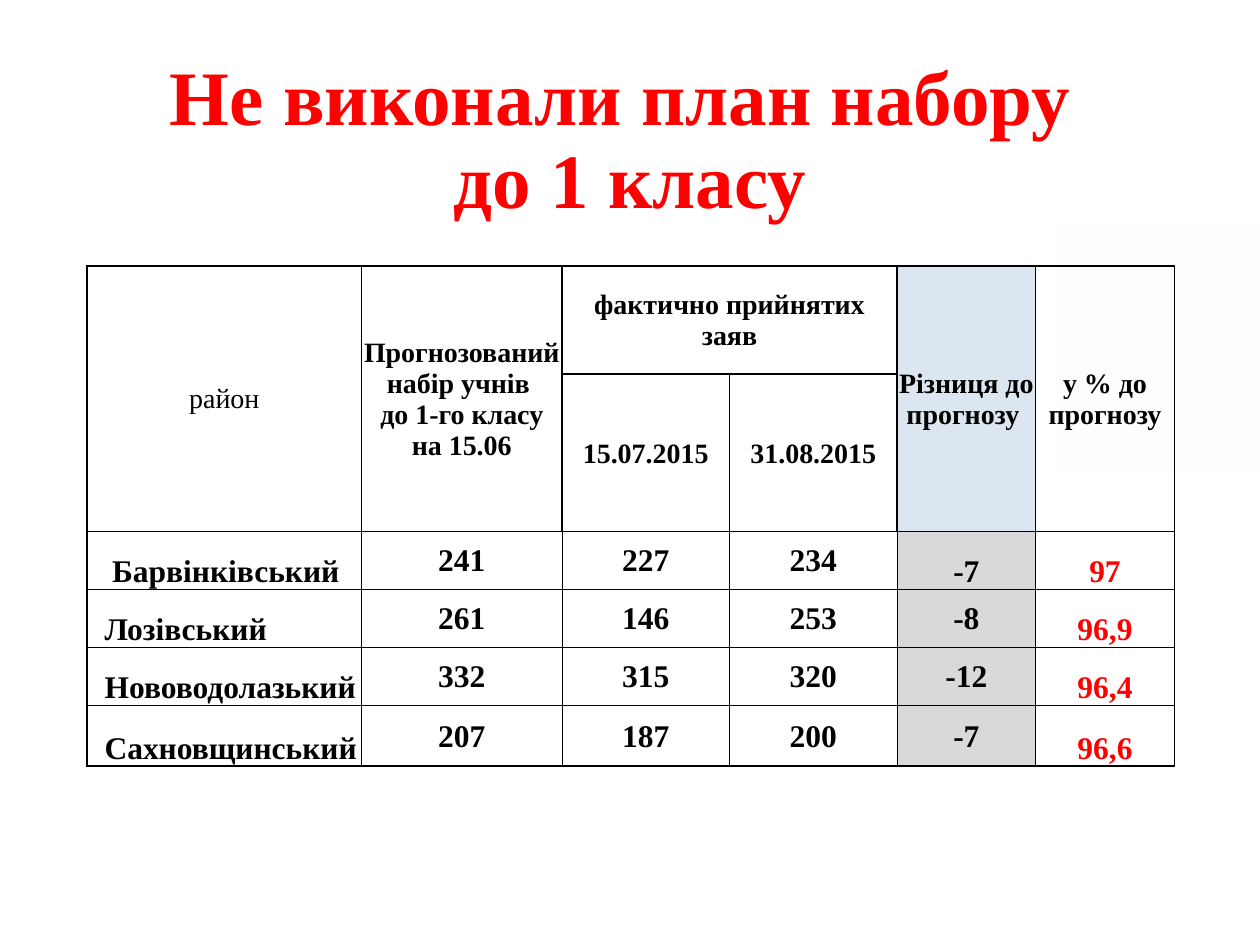
from dataclasses import dataclass

from lxml import etree
from pptx import Presentation
from pptx.dml.color import RGBColor
from pptx.enum.shapes import MSO_SHAPE
from pptx.enum.text import MSO_ANCHOR, PP_ALIGN
from pptx.oxml.ns import qn
from pptx.util import Inches, Pt

RECTANGLE = MSO_SHAPE.RECTANGLE
MIDDLE, BOTTOM = MSO_ANCHOR.MIDDLE, MSO_ANCHOR.BOTTOM
LEFT, CENTER = PP_ALIGN.LEFT, PP_ALIGN.CENTER


@dataclass(frozen=True)
class Theme:
    font: str = "Times New Roman"
    title_size: int = 44
    header_size: int = 16
    body_size: int = 18
    thick: float = 1
    thin: float = 0.5
    black: str = "000000"
    red: str = "FF0000"
    white: str = "FFFFFF"
    pale_blue: str = "DCE6F1"
    gray: str = "D9D9D9"
    tint: str = "F7FAFD"


class SlideBuilder:
    def __init__(self, page, theme):
        self.page = page
        self.theme = theme

    def format_text(self, frame, size, color, bold=True, align=CENTER, spacing=None):
        for para in frame.paragraphs:
            para.alignment = align
            if spacing:
                para.line_spacing = spacing
            for span in para.runs:
                span.font.name = self.theme.font
                span.font.size = Pt(size)
                span.font.bold = bold
                span.font.color.rgb = RGBColor.from_string(color)

    def tint_panel(self, left, top, width, height):
        panel = self.page.shapes.add_shape(
            RECTANGLE, Inches(left), Inches(top), Inches(width), Inches(height))
        panel.shadow.inherit = False
        panel.line.fill.background()
        panel.fill.gradient()
        panel.fill.gradient_angle = 270
        start, end = panel.fill.gradient_stops
        start.color.rgb = RGBColor.from_string(self.theme.tint)
        end.color.rgb = RGBColor.from_string(self.theme.white)
        start.position, end.position = 0, 0.74
        first_color = next(panel.element.iter(qn("a:gs")))[0]
        etree.SubElement(first_color, qn("a:alpha"), val="0")

    def title(self, text, left, top, width, height):
        box = self.page.shapes.add_textbox(
            Inches(left), Inches(top), Inches(width), Inches(height))
        frame = box.text_frame
        frame.word_wrap = True
        frame.vertical_anchor = MIDDLE
        frame.text = text
        self.format_text(frame, self.theme.title_size, self.theme.red, spacing=0.9)

    def table(self, left, top, widths, heights):
        frame = self.page.shapes.add_table(
            len(heights), len(widths), Inches(left), Inches(top),
            Inches(sum(widths)), Inches(sum(heights)))
        table = frame.table
        table.first_row = table.horz_banding = False
        for column, width in zip(table.columns, widths):
            column.width = Inches(width)
        for row, height in zip(table.rows, heights):
            row.height = Inches(height)
        return table

    def borders(self, cell, **widths):
        properties = cell._tc.get_or_add_tcPr()
        for side in "LRTB":
            line = etree.SubElement(
                properties, qn(f"a:ln{side}"), w=str(int(Pt(widths[side]))))
            fill = etree.SubElement(line, qn("a:solidFill"))
            etree.SubElement(fill, qn("a:srgbClr"), val=self.theme.black)

    def cell(self, cell, text, size, color=None, bold=True, align=CENTER,
             anchor=MIDDLE, fill=None, indent=0.01):
        cell.margin_left = Inches(indent)
        cell.margin_right = cell.margin_top = Inches(0.01)
        cell.margin_bottom = 0
        cell.vertical_anchor = anchor
        if fill:
            cell.fill.solid()
            cell.fill.fore_color.rgb = RGBColor.from_string(fill)
        else:
            cell.fill.background()
        cell.text = text
        self.format_text(cell.text_frame, size, color or self.theme.black, bold, align)


def main():
    theme = Theme()
    deck = Presentation()
    deck.slide_width, deck.slide_height = Inches(10), Inches(7.5)
    page = deck.slides.add_slide(deck.slide_layouts[6])
    builder = SlideBuilder(page, theme)

    builder.tint_panel(8.38, 1.8, 1.62, 1.92)
    builder.title("Не виконали план набору \vдо 1 класу", 0.69, 0.4, 8.62, 1.45)

    widths = [2.18, 1.59, 1.33, 1.33, 1.1, 1.1]
    heights = [0.86, 1.25, 0.46, 0.46, 0.46, 0.48]
    table = builder.table(0.69, 2.11, widths, heights)
    last_row, last_column = len(heights) - 1, len(widths) - 1

    for row in range(len(heights)):
        for column in range(len(widths)):
            header = row < 2
            thick_sides = {"L": header or column == 0,
                           "R": header or column == last_column,
                           "T": header or row == 2,
                           "B": header or row == last_row}
            builder.borders(table.cell(row, column), **{
                side: theme.thick if thick else theme.thin
                for side, thick in thick_sides.items()})

    for column in (0, 1, 4, 5):
        table.cell(0, column).merge(table.cell(1, column))
    table.cell(0, 2).merge(table.cell(0, 3))

    headers = [
        (0, 0, "район", None),
        (0, 1, "Прогнозований набір учнів \nдо 1-го класу на 15.06", None),
        (0, 2, "фактично прийнятих заяв", theme.white),
        (0, 4, "Різниця до прогнозу ", theme.pale_blue),
        (0, 5, "у % до прогнозу", None),
        (1, 2, "15.07.2015", theme.white),
        (1, 3, "31.08.2015", theme.white),
    ]
    for row, column, text, fill in headers:
        builder.cell(table.cell(row, column), text, theme.header_size,
                     bold=column > 0, fill=fill)

    districts = [
        ("Барвінківський", "241", "227", "234", "-7", "97"),
        ("Лозівський", "261", "146", "253", "-8", "96,9"),
        ("Нововодолазький", "332", "315", "320", "-12", "96,4"),
        ("Сахновщинський", "207", "187", "200", "-7", "96,6"),
    ]
    for row, (name, *counts, difference, percent) in enumerate(districts, 2):
        first = row == 2
        builder.cell(table.cell(row, 0), name, theme.body_size, align=LEFT,
                     anchor=BOTTOM, indent=0.2 if first else 0.14)
        for column, count in enumerate(counts, 1):
            builder.cell(table.cell(row, column), count, theme.body_size,
                         fill=theme.white if first and column == 1 else None)
        builder.cell(table.cell(row, 4), difference, theme.body_size,
                     anchor=BOTTOM if first else MIDDLE, fill=theme.gray)
        builder.cell(table.cell(row, 5), percent, theme.body_size, theme.red,
                     anchor=BOTTOM)

    deck.save("out.pptx")


if __name__ == "__main__":
    main()
